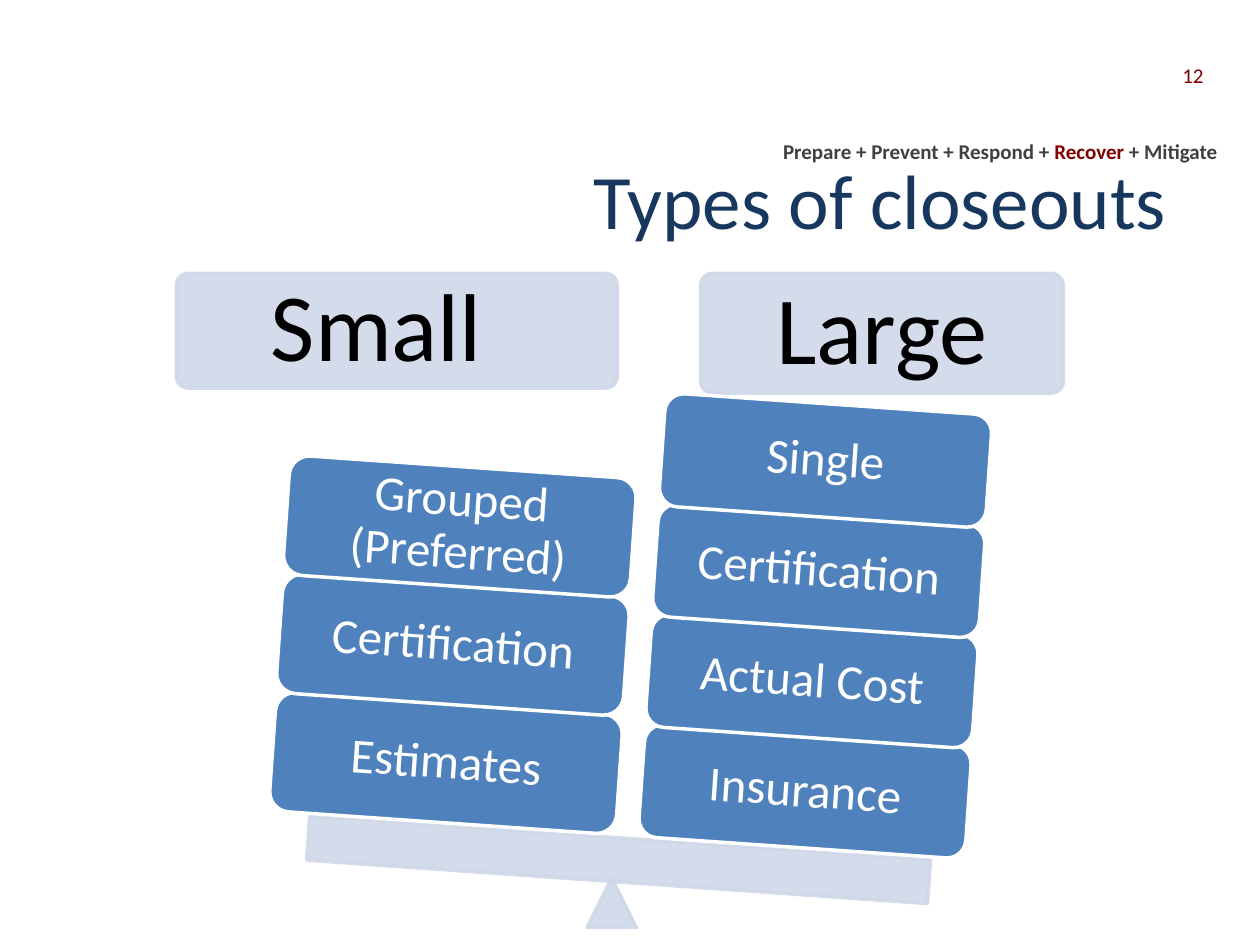
import pptx
import pptx.dml.color
import pptx.enum.shapes
import pptx.enum.text
import pptx.util
from lxml import etree

RGBColor = pptx.dml.color.RGBColor
Shape = pptx.enum.shapes.MSO_SHAPE
Align = pptx.enum.text.PP_ALIGN
Anchor = pptx.enum.text.MSO_ANCHOR

NAVY = RGBColor(0x17, 0x37, 0x5E)
MAROON = RGBColor(0x80, 0x00, 0x00)
GRAY = RGBColor(0x40, 0x40, 0x40)
PALE = RGBColor(0xD0, 0xD8, 0xE8)
BLUE = RGBColor(0x4F, 0x81, 0xBD)
WHITE = RGBColor(0xFF, 0xFF, 0xFF)
BLACK = RGBColor(0x00, 0x00, 0x00)

COLUMNS, ROWS = 100, 75
TILT = 4


class SlideBuilder:
    """Holds the style and the current slide; boxes are in grid columns and rows."""

    font_name = "Calibri"

    def __init__(self, presentation):
        self.slide = presentation.slides.add_slide(presentation.slide_layouts[5])
        self.column = presentation.slide_width / COLUMNS
        self.row = presentation.slide_height / ROWS

    def place(self, box):
        left, top, width, height = box
        return [round(value) for value in (left * self.column, top * self.row,
                                           width * self.column, height * self.row)]

    def fill_text(self, shape, runs, align, anchor=Anchor.MIDDLE, margin=None, spacing=None):
        """Each run is (text, size, colour, bold)."""
        frame = shape.text_frame
        frame_format = {"word_wrap": True, "vertical_anchor": anchor}
        if margin is not None:
            for side in ("left", "top", "right", "bottom"):
                frame_format["margin_" + side] = pptx.util.Inches(margin)
        for name, value in frame_format.items():
            setattr(frame, name, value)
        paragraph = frame.paragraphs[0]
        paragraph.alignment = align
        if spacing:
            paragraph.line_spacing = spacing
        for text, size, color, bold in runs:
            run = paragraph.add_run()
            run.text = text
            run.font.color.rgb = color
            font_format = {"name": self.font_name, "size": pptx.util.Pt(size), "bold": bold}
            for name, value in font_format.items():
                setattr(run.font, name, value)

    def title(self, box, text):
        shape = self.slide.shapes.title
        shape.left, shape.top, shape.width, shape.height = self.place(box)
        self.fill_text(shape, [(text, 44, NAVY, False)], Align.RIGHT)

    def text(self, box, runs, anchor):
        shape = self.slide.shapes.add_textbox(*self.place(box))
        self.fill_text(shape, runs, Align.RIGHT, anchor)

    def block(self, kind, box, fill, line, rotation=0, alpha=None):
        shape = self.slide.shapes.add_shape(kind, *self.place(box))
        shape.shadow.inherit = False
        shape.rotation = rotation
        shape.fill.solid()
        shape.fill.fore_color.rgb = fill
        shape.line.color.rgb = line
        shape.line.width = pptx.util.Pt(2)
        if alpha:
            tag = pptx.oxml.ns.qn("a:srgbClr")
            for color in list(shape.element.spPr.iter(tag)):
                etree.SubElement(color, pptx.oxml.ns.qn("a:alpha"), val=str(alpha * 1000))
        return shape

    def pale_block(self, kind, box, rotation=0):
        return self.block(kind, box, PALE, PALE, rotation, alpha=90)

    def heading(self, box, runs):
        shape = self.pale_block(Shape.ROUNDED_RECTANGLE, box)
        shape.adjustments[0] = 0.1
        self.fill_text(shape, runs, Align.CENTER, margin=0.23, spacing=0.9)

    def stack(self, box, step, labels):
        """Tilted blocks, piled from the bottom one up."""
        left, top, width, height = box
        for index, label in enumerate(labels):
            block_box = (left + index * step[0], top - index * step[1], width, height)
            shape = self.block(Shape.ROUNDED_RECTANGLE, block_box, BLUE, WHITE, TILT)
            self.fill_text(shape, [(label, 28, WHITE, False)], Align.CENTER,
                           margin=0.12, spacing=0.9)


def main():
    presentation = pptx.Presentation()
    presentation.slide_width = pptx.util.Inches(10)
    presentation.slide_height = pptx.util.Inches(7.5)
    builder = SlideBuilder(presentation)

    # Tagline, title and slide number
    builder.text((43.6, 10.5, 54, 3), [
        ("Prepare + Prevent + Respond + ", 12, GRAY, True),
        ("Recover ", 12, MAROON, True),
        ("+ Mitigate", 12, GRAY, True)], Anchor.TOP)
    builder.title((5, 10.8, 90, 9.9), "Types of closeouts ")
    builder.text((56.4, 2.1, 40.1, 7.7), [("12", 12, MAROON, False)], Anchor.MIDDLE)

    # Headings above the two pans
    builder.heading((14, 21.7, 35, 9.1),
                    [("Small", 55, BLACK, False), ("\t", 49, BLACK, False)])
    builder.heading((55.6, 21.7, 28.8, 9.5), [("Large", 55, BLACK, False)])

    # Balance: pivot and beam
    builder.pale_block(Shape.ISOSCELES_TRIANGLE, (46.6, 69.7, 3.9, 3.9))
    builder.pale_block(Shape.RECTANGLE, (24.4, 66.5, 49.4, 3.5), TILT)

    # Stacks on the beam
    builder.stack((50.9, 58.3, 26, 9), (0.54, 8.75),
                  ["Insurance", "Actual Cost", "Certification", "Single"])
    builder.stack((21.6, 55.8, 27.6, 9.5), (0.55, 9.38),
                  ["Estimates", "Certification", "Grouped (Preferred)"])

    presentation.save("out.pptx")


if __name__ == "__main__":
    main()
